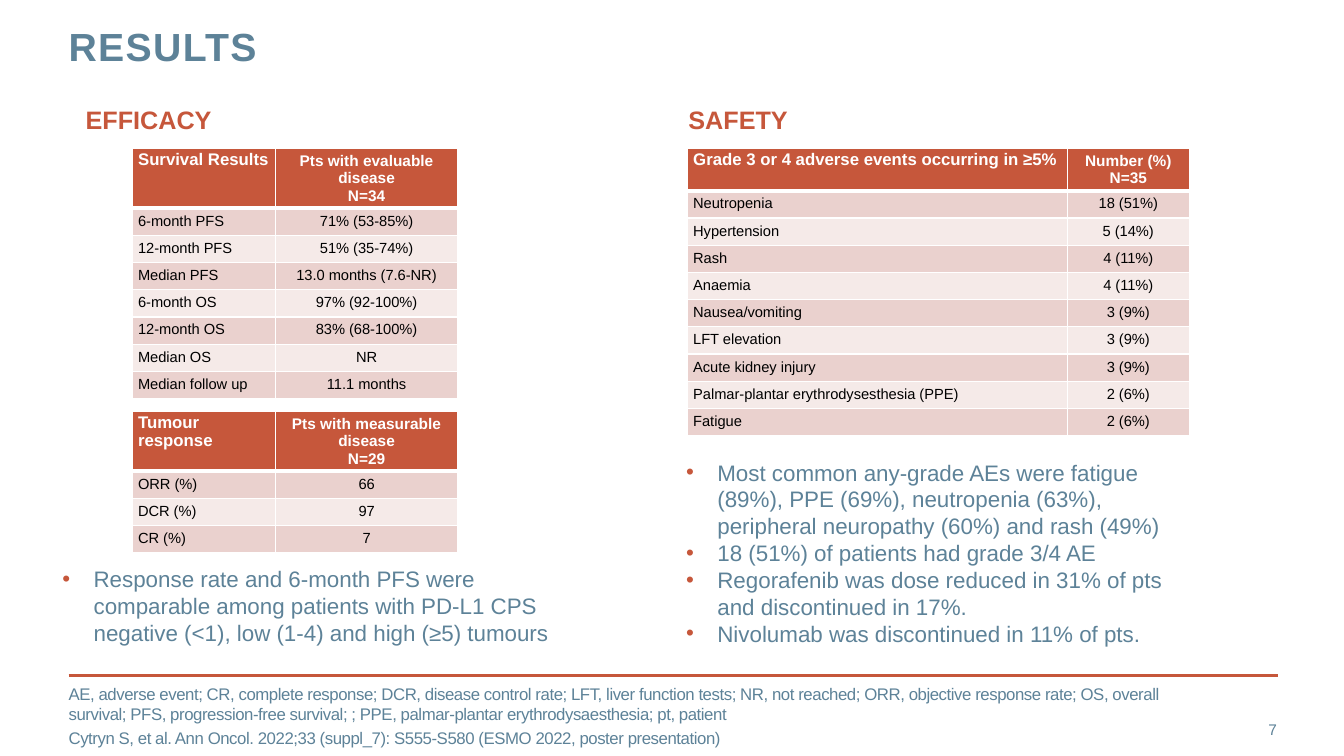
from lxml.etree import SubElement
from pptx import Presentation
from pptx.dml.color import RGBColor
from pptx.enum.shapes import MSO_CONNECTOR as Connector
from pptx.enum.text import MSO_ANCHOR as Anchor, PP_ALIGN as Align
from pptx.oxml import parse_xml
from pptx.oxml.ns import nsdecls, qn
from pptx.util import Cm, Pt

RUST = RGBColor(0xC6, 0x57, 0x3B)
SLATE = RGBColor(0x5D, 0x82, 0x98)
PINK = RGBColor(0xEA, 0xD1, 0xCE)
PALE = RGBColor(0xF5, 0xEA, 0xE8)
WHITE = RGBColor(0xFF, 0xFF, 0xFF)
BLACK = RGBColor(0, 0, 0)

SURVIVAL = [
    ("Survival Results", "Pts with evaluable disease\nN=34"),
    ("6-month PFS", "71% (53-85%)"),
    ("12-month PFS", "51% (35-74%)"),
    ("Median PFS", "13.0 months (7.6-NR)"),
    ("6-month OS", "97% (92-100%)"),
    ("12-month OS", "83% (68-100%)"),
    ("Median OS", "NR"),
    ("Median follow up", "11.1 months"),
]
RESPONSE = [
    ("Tumour response", "Pts with measurable disease\nN=29"),
    ("ORR (%)", "66"),
    ("DCR (%)", "97"),
    ("CR (%)", "7"),
]
ADVERSE_EVENTS = [
    ("Grade 3 or 4 adverse events occurring in ≥5%", "Number (%)\nN=35"),
    ("Neutropenia", "18 (51%)"),
    ("Hypertension", "5 (14%)"),
    ("Rash", "4 (11%)"),
    ("Anaemia", "4 (11%)"),
    ("Nausea/vomiting", "3 (9%)"),
    ("LFT elevation", "3 (9%)"),
    ("Acute kidney injury", "3 (9%)"),
    ("Palmar-plantar erythrodysesthesia (PPE)", "2 (6%)"),
    ("Fatigue", "2 (6%)"),
]
EFFICACY_POINTS = [
    "Response rate and 6-month PFS were comparable among patients with "
    "PD-L1 CPS negative (<1), low (1-4) and high (≥5) tumours",
]
SAFETY_POINTS = [
    "Most common any-grade AEs were fatigue (89%), PPE (69%), neutropenia (63%), "
    "peripheral neuropathy (60%) and rash (49%)",
    "18 (51%) of patients had grade 3/4 AE",
    "Regorafenib was dose reduced in 31% of pts and discontinued in 17%.",
    "Nivolumab was discontinued in 11% of pts.",
]
FOOTNOTES = [
    "AE, adverse event; CR, complete response; DCR, disease control rate; "
    "LFT, liver function tests; NR, not reached; ORR, objective response rate; "
    "OS, overall survival; PFS, progression-free survival; ; "
    "PPE, palmar-plantar erythrodysaesthesia; pt, patient",
    "Cytryn S, et al. Ann Oncol. 2022;33 (suppl_7): S555-S580 "
    "(ESMO 2022, poster presentation)",
]


def style(para, size, color, bold=False):
    font = para.font
    font.name, font.size, font.bold = "Arial", Pt(size), bold
    font.color.rgb = color


def set_margins(holder, left, top, right, bottom):
    holder.margin_left, holder.margin_top = Cm(left), Cm(top)
    holder.margin_right, holder.margin_bottom = Cm(right), Cm(bottom)


def space_letters(para, points):
    for span in para.runs:
        span.font._element.set("spc", str(round(points * 100)))


def add_text(page, lines, left, top, width, height, margins, wrap=True):
    box = page.shapes.add_textbox(Cm(left), Cm(top), Cm(width), Cm(height))
    frame = box.text_frame
    frame.word_wrap = wrap
    set_margins(frame, *margins)
    frame.text = "\n".join(lines)
    return frame


def add_heading(page, text, left, width):
    frame = add_text(page, [text], left, 2.51, width, 1.02, (0, 0.13, 0.25, 0.13), wrap=False)
    style(frame.paragraphs[0], 18, RUST, bold=True)


def add_bullets(page, points, left, top, width, height):
    frame = add_text(page, points, left, top, width, height, (0.25, 0.13, 0.25, 0.13))
    for para in frame.paragraphs:
        para.line_spacing = Pt(19.2)
        props = para._p.get_or_add_pPr()
        props.set("marL", str(Cm(0.79)))
        props.set("indent", str(-Cm(0.79)))
        SubElement(SubElement(props, qn("a:buClr")), qn("a:srgbClr")).set("val", str(RUST))
        SubElement(props, qn("a:buFont")).set("typeface", "Arial")
        SubElement(props, qn("a:buChar")).set("char", "•")
        style(para, 16, SLATE)


def set_borders(cell, top, bottom):
    widths = {"lnL": 1, "lnR": 1, "lnT": top, "lnB": bottom}
    props = cell._tc.get_or_add_tcPr()
    for index, (side, width) in enumerate(widths.items()):
        props.insert(index, parse_xml(
            f'<a:{side} {nsdecls("a")} w="{Pt(width)}"><a:solidFill>'
            f'<a:srgbClr val="{WHITE}"/></a:solidFill></a:{side}>'))


def fill_cell(cell, text, row, column):
    header = row == 0
    cell.text = text
    pad = 0.09 if header else 0.12
    set_margins(cell, 0.15, pad, 0.15, pad)
    cell.fill.solid()
    cell.fill.fore_color.rgb = RUST if header else PINK if row % 2 else PALE
    set_borders(cell, top=3 if row == 1 else 1, bottom=3 if header else 1)
    for para in cell.text_frame.paragraphs:
        para.alignment = Align.CENTER if column else Align.LEFT
        if header:
            para.line_spacing = Pt(12.6)
            style(para, 11 if column else 12, WHITE, bold=True)
        else:
            style(para, 10.5, BLACK)


def add_results_table(page, rows, left, top, column_widths, header_height):
    row_heights = [header_height] + [0.67] * (len(rows) - 1)
    table = page.shapes.add_table(
        len(rows), len(column_widths), Cm(left), Cm(top),
        Cm(sum(column_widths)), Cm(sum(row_heights))).table
    for column, width in zip(table.columns, column_widths):
        column.width = Cm(width)
    for line, height in zip(table.rows, row_heights):
        line.height = Cm(height)
    for row, texts in enumerate(rows):
        for column, text in enumerate(texts):
            fill_cell(table.cell(row, column), text, row, column)


def set_title(page, text):
    title = page.shapes.title
    title.left, title.top, title.width, title.height = Cm(1.73), Cm(0.69), Cm(24.28), Cm(2.24)
    frame = title.text_frame
    frame.text = text
    frame.vertical_anchor = Anchor.TOP
    set_margins(frame, 0, 0, 0, 0)
    para = frame.paragraphs[0]
    para.alignment = Align.LEFT
    para.line_spacing = Pt(30)
    style(para, 28, SLATE, bold=True)
    space_letters(para, 1)


def add_footer(page):
    rule = page.shapes.add_connector(Connector.STRAIGHT, Cm(1.73), Cm(17.02), Cm(32.2), Cm(17.02))
    rule.line.color.rgb = RUST
    rule.line.width = Pt(2)
    SubElement(rule._element.spPr, qn("a:effectLst"))

    notes = add_text(page, FOOTNOTES, 1.73, 17.53, 28.27, 1.02, (0, 0, 0, 0))
    notes.vertical_anchor = Anchor.MIDDLE
    for index, para in enumerate(notes.paragraphs):
        para.line_spacing = Pt(14.4)
        para.space_before = Pt(3 if index else 0)
        style(para, 12, SLATE)
        space_letters(para, -0.3)

    number = add_text(page, ["7"], 30, 17.86, 2.18, 1.02, (0, 0, 0, 0))
    number.vertical_anchor = Anchor.MIDDLE
    number.paragraphs[0].alignment = Align.RIGHT
    style(number.paragraphs[0], 11, SLATE)


def main():
    deck = Presentation()
    deck.slide_width, deck.slide_height = Cm(33.87), Cm(19.05)
    page = deck.slides.add_slide(deck.slide_layouts[5])
    set_title(page, "RESULTS")

    # Efficacy column
    add_heading(page, "EFFICACY", 2.16, 3.56)
    add_results_table(page, SURVIVAL, 3.33, 3.73, (3.61, 4.6), 1.51)
    add_results_table(page, RESPONSE, 3.33, 10.36, (3.61, 4.6), 1.51)
    add_bullets(page, EFFICACY_POINTS, 1.32, 14.12, 13.59, 2.31)

    # Safety column
    add_heading(page, "SAFETY", 17.35, 2.9)
    add_results_table(page, ADVERSE_EVENTS, 17.32, 3.73, (9.58, 3.07), 1.08)
    add_bullets(page, SAFETY_POINTS, 17.04, 11.43, 13.28, 5.05)

    # Rule, footnotes and page number
    add_footer(page)
    deck.save("out.pptx")


if __name__ == "__main__":
    main()
